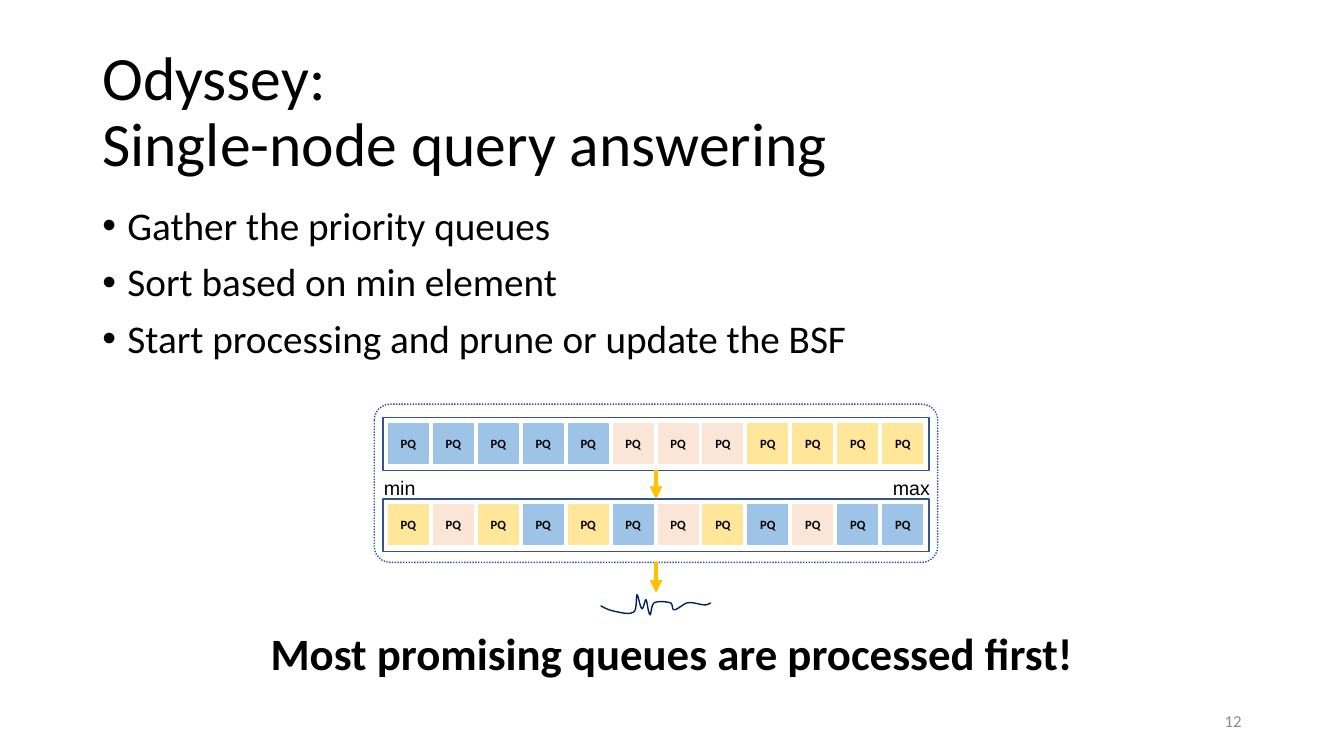
from dataclasses import dataclass
from typing import Optional

from lxml.etree import SubElement
from pptx import Presentation
from pptx.dml.color import RGBColor
from pptx.enum.dml import MSO_LINE_DASH_STYLE as Dash
from pptx.enum.shapes import MSO_CONNECTOR as Connector, MSO_SHAPE as Preset
from pptx.enum.text import MSO_ANCHOR as Anchor, PP_ALIGN as Align
from pptx.oxml.ns import qn
from pptx.util import Pt

BLACK = RGBColor(0x00, 0x00, 0x00)
GRAY = RGBColor(0x8C, 0x8C, 0x8C)
FRAME_BLUE = RGBColor(0x32, 0x54, 0x91)
NAVY = RGBColor(0x00, 0x20, 0x60)
GOLD = RGBColor(0xFF, 0xC0, 0x00)
TILE_COLORS = {
    "B": RGBColor(0x9D, 0xC3, 0xE6),
    "P": RGBColor(0xFB, 0xE5, 0xD6),
    "Y": RGBColor(0xFF, 0xE6, 0x99),
}

CENTER_X = 468.6
ROW_WIDTH, ROW_HEIGHT = 390, 37.6
TILE_WIDTH, TILE_HEIGHT, TILE_PITCH = 28.3, 28.8, 32.1
TILE_LEFT, TILE_DROP = 277.6, 4

Point = tuple[float, float]
SERIES_START: Point = (429.1, 432.7)
# Two control points and an end point for each Bezier segment
SERIES_CURVES: list[tuple[Point, Point, Point]] = [
    ((432.7, 434.9), (436.3, 436.3), (440.6, 437)),
    ((444.2, 437.8), (450, 439.2), (452.9, 437)),
    ((455, 435.6), (454.3, 425.5), (455, 424.8)),
    ((455.8, 424.8), (457.2, 434.2), (458.6, 434.9)),
    ((459.4, 435.6), (460.8, 427.7), (461.5, 428.4)),
    ((462.2, 429.1), (463, 438.5), (464.4, 439.2)),
    ((465.1, 439.2), (465.1, 432), (467.3, 430.6)),
    ((470.2, 429.1), (475.9, 429.8), (478.8, 430.6)),
    ((481, 431.3), (479.5, 435.6), (481.7, 435.6)),
    ((483.8, 435.6), (488.2, 431.3), (491, 430.6)),
    ((494.6, 429.8), (499.7, 432), (502.6, 432)),
    ((504.7, 432.7), (507.6, 430.6), (507.6, 430.6)),
]


@dataclass
class Label:
    lines: list[str]
    left: float
    top: float
    width: float
    height: float
    size: float
    font: str = "Calibri"
    color: RGBColor = BLACK
    bold: bool = False
    align: Align = Align.LEFT
    anchor: Anchor = Anchor.TOP
    spacing: float = 1.0
    bulleted: bool = False


@dataclass
class QueueRow:
    top: float
    colors: str


LABELS = [
    Label(["Odyssey:\vSingle-node query answering"], 66, 28.8, 828, 104.4, 44,
          anchor=Anchor.MIDDLE, spacing=0.9),
    Label(["Gather the priority queues", "Sort based on min element",
           "Start processing and prune or update the BSF"],
          66, 144, 828, 126, 28, spacing=0.9, bulleted=True),
    Label(["min"], 267.1, 336.2, 51.1, 24.5, 14, font="Arial"),
    Label(["max"], 630.7, 336.2, 47.5, 24.5, 14, font="Arial"),
    Label(["Most promising queues are processed first!"], 0, 443.5, 960, 46, 32,
          bold=True, align=Align.CENTER),
    Label(["12"], 678, 500.4, 216, 28.8, 12, color=GRAY,
          align=Align.RIGHT, anchor=Anchor.MIDDLE),
]
QUEUE_ROWS = [QueueRow(298.4, "BBBBBPPPYYYY"), QueueRow(356.4, "YPYBYBPYBPBB")]


def add_bullet(para) -> None:
    properties = para._p.get_or_add_pPr()
    properties.set("marL", str(Pt(18)))
    properties.set("indent", str(Pt(-18)))
    SubElement(properties, qn("a:buFont")).set("typeface", "Arial")
    SubElement(properties, qn("a:buChar")).set("char", "•")


def add_label(page, label: Label) -> None:
    box = page.shapes.add_textbox(
        Pt(label.left), Pt(label.top), Pt(label.width), Pt(label.height))
    frame = box.text_frame
    frame.word_wrap = True
    frame.vertical_anchor = label.anchor
    frame.text = "\n".join(label.lines)
    for para in frame.paragraphs:
        para.alignment = label.align
        para.line_spacing = label.spacing
        para.font.name = label.font
        para.font.size = Pt(label.size)
        para.font.bold = label.bold
        para.font.color.rgb = label.color
        if label.bulleted:
            para.space_before = Pt(10)
            add_bullet(para)


def add_box(page, preset: Preset, left: float, top: float, width: float, height: float,
            line: RGBColor, fill: Optional[RGBColor] = None):
    box = page.shapes.add_shape(preset, Pt(left), Pt(top), Pt(width), Pt(height))
    box.shadow.inherit = False
    box.line.color.rgb = line
    box.line.width = Pt(1)
    if fill is None:
        box.fill.background()
    else:
        box.fill.solid()
        box.fill.fore_color.rgb = fill
    return box


def add_tile(page, left: float, top: float, color: RGBColor) -> None:
    tile = add_box(page, Preset.RECTANGLE, left, top, TILE_WIDTH, TILE_HEIGHT, color, color)
    frame = tile.text_frame
    frame.margin_left = frame.margin_right = 0
    frame.vertical_anchor = Anchor.MIDDLE
    para = frame.paragraphs[0]
    para.text = "PQ"
    para.alignment = Align.CENTER
    para.font.name = "Calibri"
    para.font.size = Pt(9)
    para.font.bold = True
    para.font.color.rgb = BLACK


def add_queue_row(page, row: QueueRow):
    """Draw a framed row of priority queues and return the frame."""
    frame = add_box(page, Preset.RECTANGLE, CENTER_X - ROW_WIDTH / 2, row.top,
                    ROW_WIDTH, ROW_HEIGHT, FRAME_BLUE)
    for column, key in enumerate(row.colors):
        add_tile(page, TILE_LEFT + column * TILE_PITCH, row.top + TILE_DROP, TILE_COLORS[key])
    return frame


def add_arrow(page, top: float, bottom: float):
    arrow = page.shapes.add_connector(
        Connector.STRAIGHT, Pt(CENTER_X), Pt(top), Pt(CENTER_X), Pt(bottom))
    arrow.line.color.rgb = GOLD
    arrow.line.width = Pt(3)
    SubElement(arrow.line._get_or_add_ln(), qn("a:tailEnd")).set("type", "triangle")
    SubElement(arrow._element.spPr, qn("a:effectLst"))
    return arrow


def bezier_point(start: Point, first: Point, second: Point, end: Point, t: float) -> Point:
    weights = ((1 - t) ** 3, 3 * t * (1 - t) ** 2, 3 * t ** 2 * (1 - t), t ** 3)
    controls = (start, first, second, end)
    return (sum(w * x for w, (x, _) in zip(weights, controls)),
            sum(w * y for w, (_, y) in zip(weights, controls)))


def add_series_curve(page, steps: int = 8) -> None:
    points: list[Point] = []
    start = SERIES_START
    for first, second, end in SERIES_CURVES:
        points += [bezier_point(start, first, second, end, step / steps)
                   for step in range(1, steps + 1)]
        start = end
    builder = page.shapes.build_freeform(Pt(SERIES_START[0]), Pt(SERIES_START[1]))
    builder.add_line_segments([(Pt(x), Pt(y)) for x, y in points], close=False)
    curve = builder.convert_to_shape()
    curve.shadow.inherit = False
    curve.fill.background()
    curve.line.color.rgb = NAVY
    curve.line.width = Pt(1)


def main() -> None:
    deck = Presentation()
    deck.slide_width, deck.slide_height = Pt(960), Pt(540)
    page = deck.slides.add_slide(deck.slide_layouts[6])

    panel = add_box(page, Preset.ROUNDED_RECTANGLE, 267.4, 288.7, 402.4, 113, FRAME_BLUE)
    panel.adjustments[0] = 0.1
    panel.line.dash_style = Dash.ROUND_DOT
    unsorted_row, sorted_row = [add_queue_row(page, row) for row in QUEUE_ROWS]

    sort_arrow = add_arrow(page, 336, 356.4)
    sort_arrow.begin_connect(unsorted_row, 2)
    sort_arrow.end_connect(sorted_row, 0)
    process_arrow = add_arrow(page, 401.7, 423.4)
    process_arrow.begin_connect(panel, 2)

    add_series_curve(page)
    for label in LABELS:
        add_label(page, label)
    deck.save("out.pptx")


if __name__ == "__main__":
    main()
